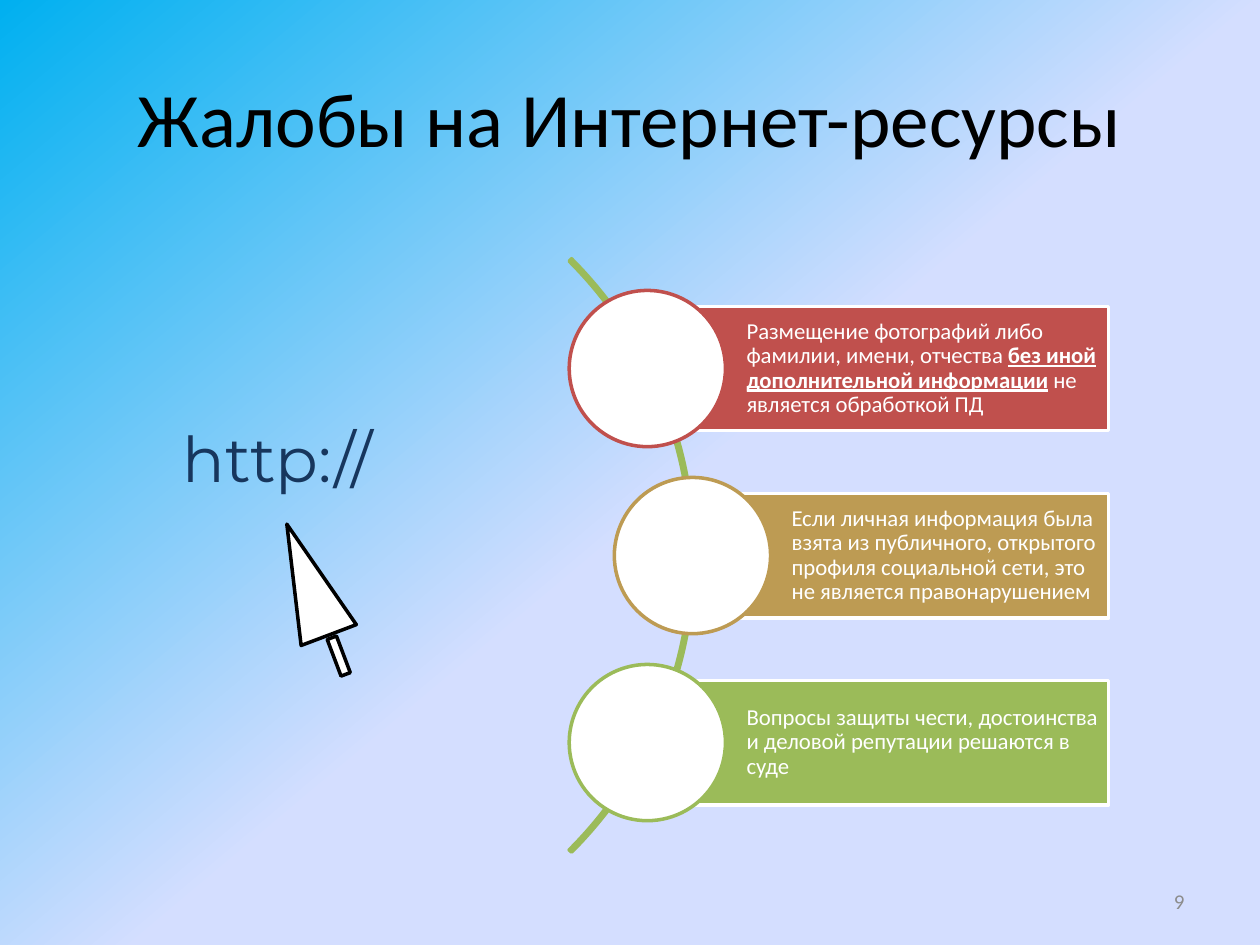
"""Build a slide about complaints against Internet resources."""
import pptx
import pptx.dml.color
import pptx.enum.shapes
import pptx.enum.text
import pptx.util

Cm = pptx.util.Cm
Pt = pptx.util.Pt
RGBColor = pptx.dml.color.RGBColor
Shape = pptx.enum.shapes.MSO_SHAPE
Align = pptx.enum.text.PP_ALIGN
Anchor = pptx.enum.text.MSO_ANCHOR

SKY = RGBColor(0x00, 0xB0, 0xF0)
LAVENDER = RGBColor(0xD4, 0xDE, 0xFF)
RED = RGBColor(0xC0, 0x50, 0x4D)
OCHRE = RGBColor(0xBD, 0x9B, 0x53)
GREEN = RGBColor(0x9B, 0xBB, 0x59)
NAVY = RGBColor(0x17, 0x36, 0x5D)
GRAY = RGBColor(0x8C, 0x8C, 0x8C)
WHITE = RGBColor(0xFF, 0xFF, 0xFF)
BLACK = RGBColor(0, 0, 0)

TITLE = "Жалобы на Интернет-ресурсы"
RULES = [
    (RED, 13.05, [
        ("Размещение фотографий либо фамилии, имени, отчества ", False),
        ("без иной дополнительной информации", True),
        (" не является обработкой ПД", False),
    ]),
    (OCHRE, 13.96, [
        ("Если личная информация была взята из публичного, открытого профиля "
         "социальной сети, это не является правонарушением", False),
    ]),
    (GREEN, 13.05, [
        ("Вопросы защиты чести, достоинства и деловой репутации решаются в суде", False),
    ]),
]
CURSOR = [
    (Shape.ISOSCELES_TRIANGLE, (5.61, 10.49, 1.19, 2.39)),
    (Shape.RECTANGLE, (6.73, 12.83, 0.2, 0.79)),
]
CURSOR_ROTATION = 339.3
ARC_CENTER_X, CENTER_Y, ARC_DIAMETER = 5.54, 11.2, 16.92
PITCH, CIRCLE, BAR_HEIGHT, BAR_RIGHT = 3.77, 3.15, 2.51, 22.35


def add_shape(slide, kind, box, fill, line):
    shape = slide.shapes.add_shape(kind, *map(Cm, box))
    shape.shadow.inherit = False
    shape.fill.solid()
    shape.fill.fore_color.rgb = fill
    shape.line.color.rgb = line
    shape.line.width = Pt(2)
    return shape


def add_run(paragraph, text, size, color, font="Calibri", emphasis=False):
    run = paragraph.add_run()
    run.text = text
    run.font.name = font
    run.font.size = Pt(size)
    run.font.color.rgb = color
    run.font.bold = emphasis
    run.font.underline = emphasis


def add_label(slide, text, box, align, anchor, size, color, font="Calibri", wrap=True):
    frame = slide.shapes.add_textbox(*map(Cm, box)).text_frame
    frame.word_wrap = wrap
    frame.vertical_anchor = anchor
    paragraph = frame.paragraphs[0]
    paragraph.alignment = align
    add_run(paragraph, text, size, color, font)


def paint_background(slide):
    fill = slide.background.fill
    fill.gradient()
    fill.gradient_angle = 310
    for stop, (color, position) in zip(fill.gradient_stops, [(SKY, 0), (LAVENDER, 0.53)]):
        stop.color.rgb = color
        stop.position = position


def add_title(slide):
    title = slide.shapes.title
    title.left, title.top, title.width, title.height = map(Cm, (1.27, 0.76, 22.86, 3.18))
    title.text_frame.vertical_anchor = Anchor.MIDDLE
    paragraph = title.text_frame.paragraphs[0]
    paragraph.alignment = Align.CENTER
    add_run(paragraph, TITLE, 44, BLACK)


def add_arc(slide):
    radius = ARC_DIAMETER / 2
    box = (ARC_CENTER_X - radius, CENTER_Y - radius, ARC_DIAMETER, ARC_DIAMETER)
    arc = add_shape(slide, Shape.BLOCK_ARC, box, GREEN, GREEN)
    for index, value in enumerate((189, 27, 0.004)):
        arc.adjustments[index] = value


def add_rule(slide, index, color, center_x, runs):
    center_y = CENTER_Y + (index - 1) * PITCH
    bar = add_shape(
        slide, Shape.RECTANGLE,
        (center_x, center_y - BAR_HEIGHT / 2, BAR_RIGHT - center_x, BAR_HEIGHT),
        color, WHITE)
    frame = bar.text_frame
    frame.word_wrap = True
    frame.vertical_anchor = Anchor.MIDDLE
    frame.margin_left = Cm(2)
    frame.margin_top = frame.margin_right = frame.margin_bottom = Cm(0.1)
    paragraph = frame.paragraphs[0]
    paragraph.alignment = Align.LEFT
    paragraph.line_spacing = 0.9
    paragraph.space_after = Pt(4.5)
    for text, emphasis in runs:
        add_run(paragraph, text, 13, WHITE, emphasis=emphasis)
    radius = CIRCLE / 2
    add_shape(slide, Shape.OVAL, (center_x - radius, center_y - radius, CIRCLE, CIRCLE),
              WHITE, color)


def main():
    presentation = pptx.Presentation()
    presentation.slide_width, presentation.slide_height = Cm(25.4), Cm(19.05)
    slide = presentation.slides.add_slide(presentation.slide_layouts[5])
    paint_background(slide)
    add_title(slide)
    add_arc(slide)
    for index, rule in enumerate(RULES):
        add_rule(slide, index, *rule)
    add_label(slide, "9", (18.2, 17.66, 5.93, 1.01), Align.RIGHT, Anchor.MIDDLE, 12, GRAY)
    add_label(slide, "http://", (3.1, 8.33, 5, 4.04), Align.CENTER, Anchor.TOP,
              36, NAVY, "Montserrat", wrap=False)
    for kind, box in CURSOR:
        add_shape(slide, kind, box, WHITE, BLACK).rotation = CURSOR_ROTATION
    presentation.save("out.pptx")


if __name__ == "__main__":
    main()
